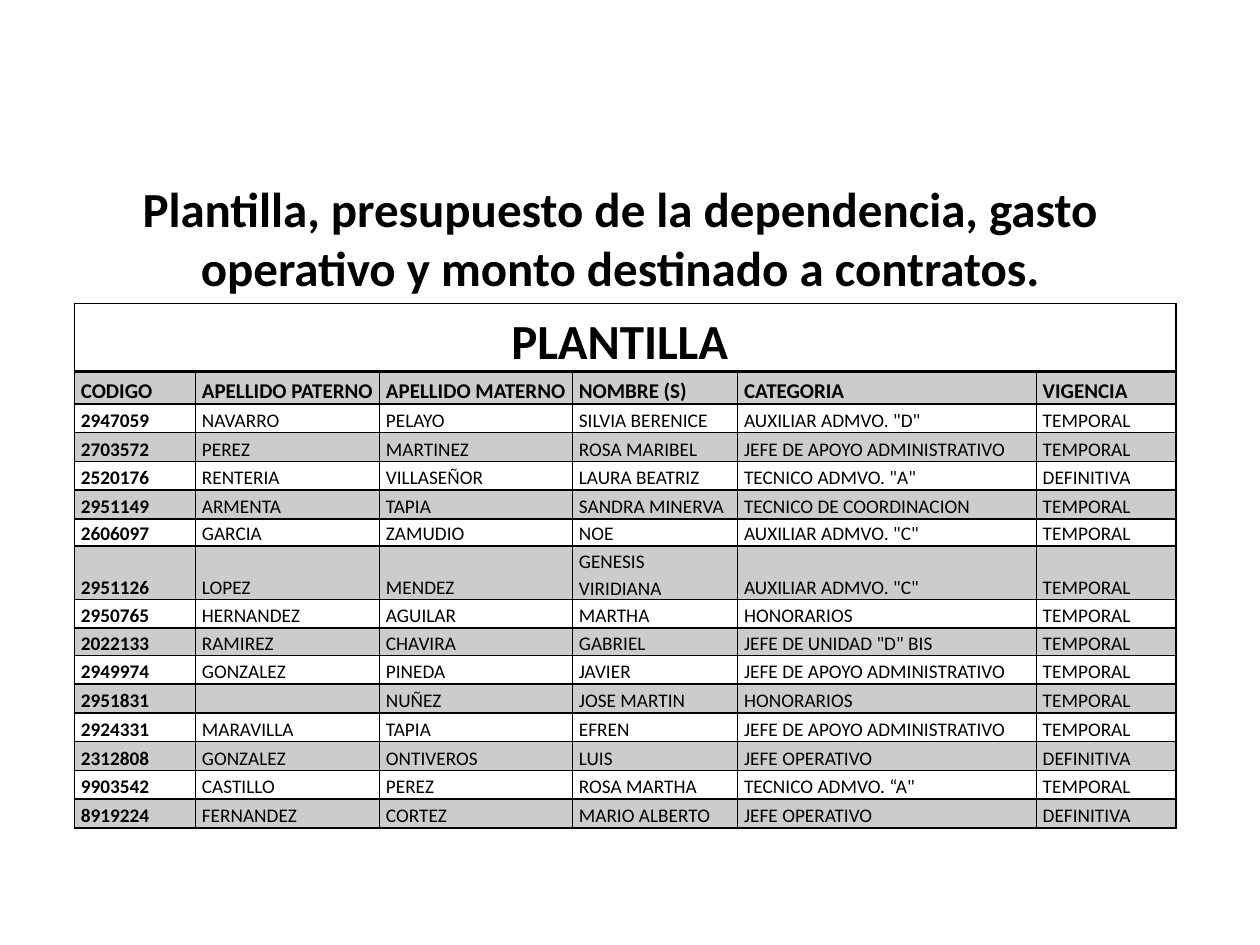
from lxml.etree import SubElement
from pptx import Presentation
from pptx.dml.color import RGBColor
from pptx.enum.text import MSO_ANCHOR, MSO_AUTO_SIZE, PP_ALIGN
from pptx.oxml.ns import qn
from pptx.util import Cm, Pt

TITLE = "Plantilla, presupuesto de la dependencia, gasto operativo y monto destinado a contratos."
CAPTION = "PLANTILLA "
HEADER = ("CODIGO", "APELLIDO PATERNO", "APELLIDO MATERNO", "NOMBRE (S)", "CATEGORIA", "VIGENCIA")
STAFF = [
    ("2947059", "NAVARRO", "PELAYO", "SILVIA BERENICE", 'AUXILIAR ADMVO. "D"', "TEMPORAL"),
    ("2703572", "PEREZ", "MARTINEZ", "ROSA MARIBEL", "JEFE DE APOYO ADMINISTRATIVO", "TEMPORAL"),
    ("2520176", "RENTERIA", "VILLASEÑOR", "LAURA BEATRIZ", 'TECNICO ADMVO. "A"', "DEFINITIVA"),
    ("2951149", "ARMENTA", "TAPIA", "SANDRA MINERVA", "TECNICO DE COORDINACION", "TEMPORAL"),
    ("2606097", "GARCIA", "ZAMUDIO", "NOE", 'AUXILIAR ADMVO. "C"', "TEMPORAL"),
    ("2951126", "LOPEZ", "MENDEZ", "GENESIS VIRIDIANA", 'AUXILIAR ADMVO. "C"', "TEMPORAL"),
    ("2950765", "HERNANDEZ", "AGUILAR", "MARTHA", "HONORARIOS", "TEMPORAL"),
    ("2022133", "RAMIREZ", "CHAVIRA", "GABRIEL", 'JEFE DE UNIDAD "D" BIS', "TEMPORAL"),
    ("2949974", "GONZALEZ", "PINEDA", "JAVIER", "JEFE DE APOYO ADMINISTRATIVO", "TEMPORAL"),
    ("2951831", "", "NUÑEZ", "JOSE MARTIN", "HONORARIOS", "TEMPORAL"),
    ("2924331", "MARAVILLA", "TAPIA", "EFREN", "JEFE DE APOYO ADMINISTRATIVO", "TEMPORAL"),
    ("2312808", "GONZALEZ", "ONTIVEROS", "LUIS", "JEFE OPERATIVO", "DEFINITIVA"),
    ("9903542", "CASTILLO", "PEREZ", "ROSA MARTHA", "TECNICO ADMVO. “A\"", "TEMPORAL"),
    ("8919224", "FERNANDEZ", "CORTEZ", "MARIO ALBERTO", "JEFE OPERATIVO", "DEFINITIVA"),
]
JUSTIFIED = {"2606097", "2951126", "2022133"}
COL_WIDTHS = (2.44, 3.71, 3.89, 3.33, 6.02, 2.82)
CAPTION_HEIGHT, HEADER_HEIGHT, ROW_HEIGHT, JUSTIFIED_HEIGHT = 1.37, 0.65, 0.58, 0.55
BLACK = "000000"


def color(hex_code):
    return RGBColor.from_string(hex_code)


def write(tf, text, size, bold=False, align=None, spacing=None, after=None):
    p = tf.paragraphs[0]
    p.alignment, p.line_spacing = align, spacing
    if after:
        p.space_after = Pt(after)
    # An empty cell still needs its size, or its row would grow.
    p.font.size = Pt(size)
    if text:
        r = p.add_run()
        r.text = text
        r.font.name, r.font.size, r.font.bold = "Calibri", Pt(size), bold
        r.font.color.rgb = color(BLACK)


def draw_borders(cell, bottom=1):
    tc_pr = cell._tc.get_or_add_tcPr()
    for side, width in (("L", 1), ("R", 1), ("T", 1), ("B", bottom)):
        ln = SubElement(tc_pr, qn("a:ln" + side), w=str(Pt(width)))
        SubElement(SubElement(ln, qn("a:solidFill")), qn("a:srgbClr"), val=BLACK)


def shade(cell, shaded):
    """Fill with black at 20 % opacity, or leave clear."""
    if not shaded:
        cell.fill.background()
        return
    cell.fill.solid()
    cell.fill.fore_color.rgb = color(BLACK)
    clr = cell._tc.tcPr.find(qn("a:solidFill")).find(qn("a:srgbClr"))
    SubElement(clr, qn("a:alpha"), val="20000")


def set_cell(cell, text, shaded=False, anchor=MSO_ANCHOR.BOTTOM, top=0, bottom=1, **fmt):
    cell.margin_left = cell.margin_right = Cm(0.13)
    cell.margin_top, cell.margin_bottom = Cm(top), 0
    cell.vertical_anchor = anchor
    write(cell.text_frame, text, spacing=1.15, **fmt)
    draw_borders(cell, bottom)
    shade(cell, shaded)


prs = Presentation()
prs.slide_width, prs.slide_height = Cm(25.4), Cm(19.05)
s = prs.slides.add_slide(prs.slide_layouts[5])

title = s.shapes.title
title.left, title.top, title.width, title.height = Cm(1.9), Cm(3.48), Cm(21.2), Cm(2.64)
title.text_frame.word_wrap = True
title.text_frame.auto_size = MSO_AUTO_SIZE.SHAPE_TO_FIT_TEXT
title.text_frame.vertical_anchor = MSO_ANCHOR.TOP
write(title.text_frame, TITLE, 28, bold=True, align=PP_ALIGN.CENTER)

heights = [CAPTION_HEIGHT, HEADER_HEIGHT]
heights += [JUSTIFIED_HEIGHT if row[0] in JUSTIFIED else ROW_HEIGHT for row in STAFF]
table = s.shapes.add_table(len(heights), len(HEADER), Cm(1.5), Cm(6.12),
                           Cm(sum(COL_WIDTHS)), Cm(sum(heights))).table
table.first_row = table.horz_banding = False
for column, width in zip(table.columns, COL_WIDTHS):
    column.width = Cm(width)
for row, height in zip(table.rows, heights):
    row.height = Cm(height)

table.cell(0, 0).merge(table.cell(0, len(HEADER) - 1))
for j, heading in enumerate(HEADER):
    set_cell(table.cell(0, j), "" if j else CAPTION, anchor=MSO_ANCHOR.MIDDLE, bottom=2,
             size=28, bold=True, align=PP_ALIGN.CENTER)
    set_cell(table.cell(1, j), heading, shaded=True, size=12, bold=True, align=PP_ALIGN.JUSTIFY)

for i, person in enumerate(STAFF):
    if person[0] in JUSTIFIED:
        layout = dict(align=PP_ALIGN.JUSTIFY)
    else:
        layout = dict(top=0.03, after=10)
    for j, text in enumerate(person):
        set_cell(table.cell(i + 2, j), text, shaded=i % 2 == 1, size=11, bold=j == 0, **layout)

prs.save("out.pptx")
